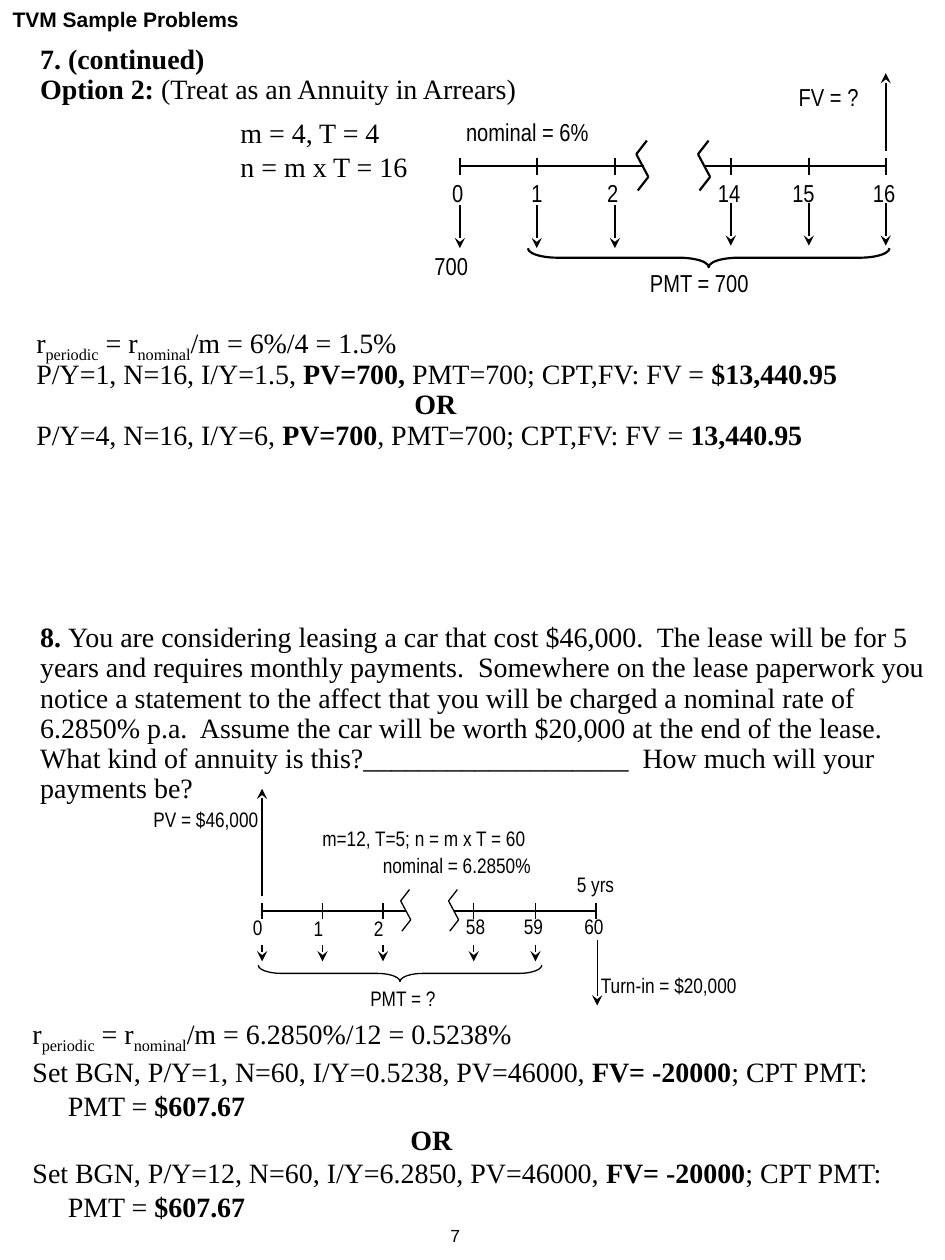
from dataclasses import dataclass
from itertools import pairwise

from lxml.etree import SubElement
from pptx import Presentation
from pptx.dml.color import RGBColor
from pptx.enum.shapes import MSO_CONNECTOR as Conn, MSO_SHAPE as Shape
from pptx.enum.text import MSO_ANCHOR as Anchor, MSO_AUTO_SIZE as Auto, PP_ALIGN as Align
from pptx.oxml.ns import qn
from pptx.util import Inches, Pt


@dataclass(frozen=True)
class Theme:
    ink: RGBColor = RGBColor(0, 0, 0)
    paper: RGBColor = RGBColor(255, 255, 255)
    body_font: str = "Times New Roman"
    label_font: str = "Arial Narrow"
    head_font: str = "Arial"
    body: int = 16
    head: int = 12
    page: int = 10


@dataclass
class Para:
    """Runs are (text, style) pairs; style is "", "b" (bold) or "sub"."""
    runs: list
    indent: float = 0


class Page:
    def __init__(self, slide, theme):
        self.s, self.theme = slide, theme
        self.shapes = slide.shapes
        bg = slide.background.fill
        bg.solid()
        bg.fore_color.rgb = theme.paper

    def begin_diagram(self, line_width, label_size, scale=1.0):
        """Send the following elements into a new group with its own sizes."""
        self.shapes = self.s.shapes.add_group_shape().shapes
        self.line_width, self.label_size, self.scale = line_width, label_size, scale

    def end_diagram(self):
        self.shapes = self.s.shapes

    def add_run(self, p, text, font, size, style=""):
        r = p.add_run()
        r.text = text
        r.font.name, r.font.size = font, Pt(size)
        r.font.bold = style == "b"
        r.font.color.rgb = self.theme.ink
        if style == "sub":
            r.font._element.set("baseline", "-25000")

    def title(self, text, left, top, width, height):
        sp = self.s.shapes.title
        sp.left, sp.top = Inches(left), Inches(top)
        sp.width, sp.height = Inches(width), Inches(height)
        tf = sp.text_frame
        tf.auto_size, tf.vertical_anchor = Auto.NONE, Anchor.TOP
        p = tf.paragraphs[0]
        p.alignment = Align.LEFT
        self.add_run(p, text, self.theme.head_font, self.theme.head, "b")

    def text_frame(self, left, top, width, height, wrap=True):
        sp = self.shapes.add_textbox(*map(Inches, (left, top, width, height)))
        tf = sp.text_frame
        tf.word_wrap = wrap
        tf.auto_size = Auto.SHAPE_TO_FIT_TEXT
        return tf

    def body(self, paras, left, top, width, height, spacing=None):
        tf = self.text_frame(left, top, width, height)
        for i, para in enumerate(paras):
            p = tf.add_paragraph() if i else tf.paragraphs[0]
            p.line_spacing = spacing
            if para.indent:
                p._p.get_or_add_pPr().set("marL", str(Inches(para.indent)))
            for text, style in para.runs:
                self.add_run(p, text, self.theme.body_font, self.theme.body, style)

    def page_number(self, text, left, top, width, height):
        tf = self.text_frame(left, top, width, height)
        tf.auto_size = Auto.NONE
        tf.paragraphs[0].alignment = Align.RIGHT
        self.add_run(tf.paragraphs[0], text, self.theme.head_font, self.theme.page)

    def label(self, text, left, top, width=None):
        """Without a width, allow for the digits of a number."""
        size = self.label_size
        width = width or 0.2 + 0.0063 * size * len(text)
        tf = self.text_frame(left, top, width, 0.1 + size / 60, wrap=False)
        self.add_run(tf.paragraphs[0], text, self.theme.label_font, size)

    def line(self, x1, y1, x2, y2, arrow=False):
        c = self.shapes.add_connector(Conn.STRAIGHT, *map(Inches, (x1, y1, x2, y2)))
        c.line.color.rgb = self.theme.ink
        c.line.width = Pt(self.line_width)
        if arrow:
            SubElement(c.line._get_or_add_ln(), qn("a:tailEnd"), type="stealth")
        SubElement(c._element.spPr, qn("a:effectLst"))

    def brace(self, left, top, width, height, curve):
        """A left brace turned so that its tip points down."""
        sp = self.shapes.add_shape(Shape.LEFT_BRACE, *map(Inches, (left, top, width, height)))
        sp.rotation = 270
        sp.adjustments[0] = curve
        sp.fill.background()
        sp.line.color.rgb = self.theme.ink
        sp.line.width = Pt(self.line_width)
        sp.shadow.inherit = False

    def axis(self, y, spans, ticks, half_tick):
        """Ticks are (x, label, label left, label top)."""
        for x1, x2 in spans:
            self.line(x1, y, x2, y)
        for x, text, left, top in ticks:
            self.line(x, y - half_tick, x, y + half_tick)
            self.label(text, left, top)

    def axis_break(self, x, y):
        zigzag = [(0.07, -0.17), (0, -0.08), (0.08, 0.07), (0.01, 0.16)]
        points = [(x + dx * self.scale, y + dy * self.scale) for dx, dy in zigzag]
        for a, b in pairwise(points):
            self.line(*a, *b)


def rate_line(result):
    return Para([("r", ""), ("periodic", "sub"), (" = r", ""), ("nominal", "sub"),
                 (f"/m = {result}", "")])


def lease_solution(keys):
    return [Para([(f"Set BGN, {keys}, PV=46000, ", ""), ("FV= -20000", "b"), ("; CPT PMT:", "")]),
            Para([("PMT = ", ""), ("$607.67", "b")], indent=0.28)]


def draw_savings(page):
    page.body([Para([("7. (continued)", "b")]),
               Para([("Option 2: ", "b"), ("(Treat as an Annuity in Arrears)", "")])],
              0.22, 0.31, 7.28, 0.58, spacing=0.9)
    page.begin_diagram(line_width=1.25, label_size=14, scale=1.2)
    ticks = [(3.65, "0", 3.49), (4.26, "1", 4.12), (4.88, "2", 4.72),
             (5.8, "14", 5.6), (6.42, "15", 6.19), (7.03, "16", 6.83)]
    page.axis(1.32, [(3.65, 5.11), (5.59, 7.03)], [(*t, 1.36) for t in ticks], 0.07)
    for x in (5.05, 5.54):
        page.axis_break(x, 1.32)
    for x, _, _ in ticks:
        top = 1.63 if x < 5 else 1.61
        page.line(x, top, x, top + 0.34, arrow=True)
    page.line(7.03, 1.2, 7.03, 0.58, arrow=True)
    page.brace(5.55, 0.61, 0.15, 2.87, 1.567)
    page.label("FV = ?", 6.24, 0.6, 0.68)
    page.label("nominal = 6%", 3.6, 0.88, 1.18)
    page.label("PMT = 700", 5.06, 2.08, 0.99)
    page.label("700", 3.35, 1.94)
    page.body([Para([("m = 4, T = 4", "")]), Para([("n = m x T = 16", "")])],
              1.81, 0.87, 1.59, 0.64)
    page.end_diagram()
    page.body([rate_line("6%/4 = 1.5%"),
               Para([("P/Y=1, N=16, I/Y=1.5, ", ""), ("PV=700, ", "b"),
                     ("PMT=700; CPT,FV: FV = ", ""), ("$13,440.95", "b")]),
               Para([("OR", "b")], indent=3),
               Para([("P/Y=4, N=16, I/Y=6, ", ""), ("PV=700", "b"),
                     (", PMT=700; CPT,FV: FV = ", ""), ("13,440.95", "b")])],
              0.19, 2.54, 7.31, 1.07, spacing=0.9)


def draw_lease(page):
    question = ("You are considering leasing a car that cost $46,000.  The lease will be for 5 "
                "years and requires monthly payments.  Somewhere on the lease paperwork you "
                "notice a statement to the affect that you will be charged a nominal rate of "
                "6.2850% p.a.  Assume the car will be worth $20,000 at the end of the lease.  "
                "What kind of annuity is this?___________________  How much will your "
                "payments be?")
    page.body([Para([("8. ", "b"), (question, "")])], 0.22, 4.9, 7.28, 1.55, spacing=0.9)
    page.begin_diagram(line_width=0.75, label_size=12)
    ticks = [(2.08, "0", 1.91, 7.21), (2.56, "1", 2.39, 7.22), (3.04, "2", 2.87, 7.22),
             (3.76, "58", 3.6, 7.2), (4.25, "59", 4.06, 7.2), (4.73, "60", 4.54, 7.2)]
    page.axis(7.23, [(2.08, 3.22), (3.6, 4.73)], ticks, 0.06)
    for x in (3.18, 3.56):
        page.axis_break(x, 7.23)
    for x, *_ in ticks[:-1]:
        page.line(x, 7.5, x, 7.63, arrow=True)
    page.line(4.74, 7.46, 4.74, 7.98, arrow=True)
    page.line(2.08, 7.11, 2.08, 6.26, arrow=True)
    page.brace(3.11, 6.6, 0.13, 2.25, 1.403)
    page.label("PV = $46,000", 1.12, 6.35, 1.04)
    page.label("m=12, T=5; n = m x T = 60", 2.46, 6.5, 1.82)
    page.label("nominal = 6.2850%", 2.94, 6.72, 1.39)
    page.label("5 yrs", 4.48, 6.87, 0.5)
    page.label("PMT = ?", 2.84, 7.77, 0.72)
    page.label("Turn-in = $20,000", 4.67, 7.67, 1.29)
    page.end_diagram()
    page.body([rate_line("6.2850%/12 = 0.5238%"),
               *lease_solution("P/Y=1, N=60, I/Y=0.5238"),
               Para([("OR", "b")], indent=3),
               *lease_solution("P/Y=12, N=60, I/Y=6.2850")],
              0.16, 8.02, 7.34, 1.7)


def main():
    prs = Presentation()
    prs.slide_width, prs.slide_height = Inches(7.5), Inches(10)
    page = Page(prs.slides.add_slide(prs.slide_layouts[5]), Theme())
    page.title("TVM Sample Problems", 0, 0, 3.25, 0.25)
    draw_savings(page)
    draw_lease(page)
    page.page_number("7", 3.25, 9.67, 0.5, 0.33)
    prs.save("out.pptx")


if __name__ == "__main__":
    main()
